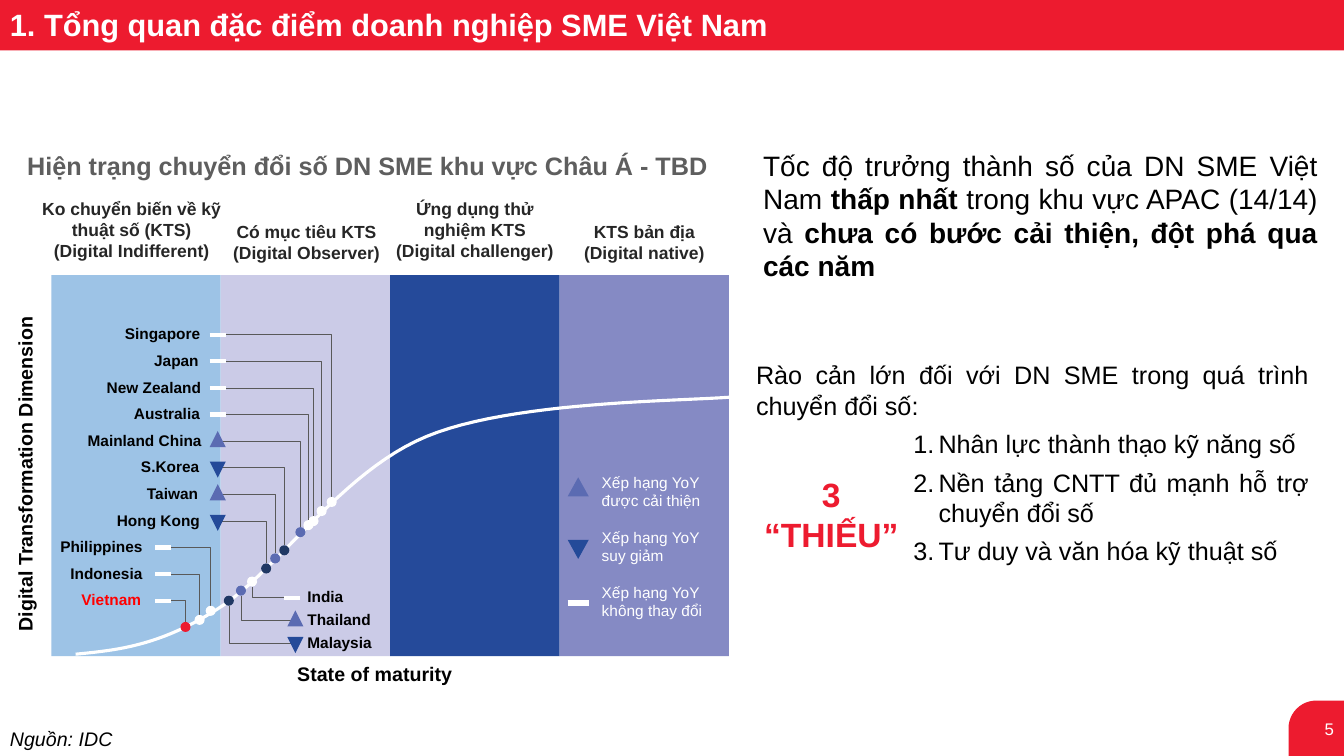
from dataclasses import dataclass
from typing import Any, Sequence

from lxml import etree
from pptx import Presentation
from pptx.dml.color import RGBColor
from pptx.enum.shapes import MSO_CONNECTOR, MSO_SHAPE
from pptx.enum.text import MSO_ANCHOR, MSO_AUTO_SIZE, PP_ALIGN
from pptx.oxml.ns import qn
from pptx.util import Cm, Length, Pt

RECT, OVAL = MSO_SHAPE.RECTANGLE, MSO_SHAPE.OVAL
TRIANGLE, CORNER = MSO_SHAPE.ISOSCELES_TRIANGLE, MSO_SHAPE.ROUND_1_RECTANGLE
STRAIGHT, ELBOW = MSO_CONNECTOR.STRAIGHT, MSO_CONNECTOR.ELBOW
LEFT, CENTER, RIGHT, JUSTIFY = PP_ALIGN.LEFT, PP_ALIGN.CENTER, PP_ALIGN.RIGHT, PP_ALIGN.JUSTIFY
MIDDLE = MSO_ANCHOR.MIDDLE
FIT = MSO_AUTO_SIZE.SHAPE_TO_FIT_TEXT

FONT = "Arial"
RED, WHITE, BLACK, GREY = "ED1B2F", "FFFFFF", "000000", "595959"
UP, DOWN, SAME = "up", "down", "same"
TRIANGLE_COLORS = {UP: "5B6BB2", DOWN: "244A99"}
DOT_COLORS = {UP: "5B6BB2", DOWN: "203864", SAME: WHITE}
DOT = 0.1
ROW_TOP, ROW_STEP = 3.17, 0.264
LOWER_TOP, LOWER_STEP = 5.78, 0.225
BAND_LEFT, BAND_TOP, BAND_WIDTH, BAND_HEIGHT = 0.51, 2.73, 1.68, 3.78


@dataclass
class Country:
    name: str
    label_left: float
    label_width: float
    marker_left: float
    dot_x: float
    dot_y: float
    trend: str


@dataclass
class Stage:
    color: str
    left: float
    top: float
    width: float
    wrap: bool
    lines: list[str]


UPPER_COUNTRIES = [
    Country("Singapore", 1.14, 1.0, 2.08, 3.29, 4.98, SAME),
    Country("Japan", 1.43, 0.68, 2.08, 3.19, 5.07, SAME),
    Country("New Zealand", 0.96, 1.2, 2.08, 3.11, 5.17, SAME),
    Country("Australia", 1.23, 0.9, 2.08, 3.06, 5.21, SAME),
    Country("Mainland China", 0.77, 1.41, 2.08, 2.98, 5.28, UP),
    Country("S.Korea", 1.3, 0.82, 2.08, 2.82, 5.46, DOWN),
    Country("Taiwan", 1.36, 0.76, 2.08, 2.73, 5.54, UP),
    Country("Hong Kong", 1.06, 1.09, 2.08, 2.64, 5.64, DOWN),
    Country("Philippines", 0.5, 1.07, 1.54, 2.09, 6.06, SAME),
    Country("Indonesia", 0.6, 0.97, 1.54, 1.98, 6.15, SAME),
    Country("Vietnam", 0.71, 0.84, 1.54, 1.84, 6.22, SAME),
]
LOWER_COUNTRIES = [
    Country("India", 2.95, 0.59, 2.82, 2.5, 5.77, SAME),
    Country("Thailand", 2.95, 0.88, 2.85, 2.39, 5.86, UP),
    Country("Malaysia", 2.95, 0.89, 2.85, 2.27, 5.96, DOWN),
]
STAGES = [
    Stage("9DC3E6", 0.31, 1.92, 1.99, True,
          ["Ko chuyển biến về kỹ thuật số (KTS)", "(Digital Indifferent)"]),
    Stage("CBCBE7", 2.16, 2.14, 1.76, False, ["Có mục tiêu KTS", "(Digital Observer)"]),
    Stage("254A9A", 3.71, 1.92, 2.0, True, ["Ứng dụng thử nghiệm KTS", "(Digital challenger)"]),
    Stage("858AC4", 5.65, 2.14, 1.48, False, ["KTS bản địa", "(Digital native)"]),
]
CURVE_START = (0.75, 6.49)
CURVE_SEGMENTS = [
    ((1.16, 6.45), (1.58, 6.41), (2.16, 6.04)),
    ((2.74, 5.68), (3.38, 4.68), (4.23, 4.33)),
    ((5.07, 3.98), (6.74, 3.98), (7.24, 3.94)),
]


def inch(value: float) -> Length:
    """Turn inches on the slide grid into a length."""
    return Cm(value * 2.54)


def rgb(color: str) -> RGBColor:
    return RGBColor.from_string(color)


def add_filled(slide: Any, kind: Any, left: float, top: float, width: float, height: float,
               color: str, flip: str = "") -> Any:
    shape = slide.shapes.add_shape(kind, inch(left), inch(top), inch(width), inch(height))
    shape.shadow.inherit = False
    shape.fill.solid()
    shape.fill.fore_color.rgb = rgb(color)
    shape.line.fill.background()
    if flip:
        shape._element.spPr.find(qn("a:xfrm")).set(flip, "1")
    return shape


def add_line(slide: Any, kind: Any, x1: float, y1: float, x2: float, y2: float,
             color: str, weight: float) -> Any:
    line = slide.shapes.add_connector(kind, inch(x1), inch(y1), inch(x2), inch(y2))
    line.line.color.rgb = rgb(color)
    line.line.width = Pt(weight)
    etree.SubElement(line._element.spPr, qn("a:effectLst"))
    return line


def style(paragraph: Any, size: float, color: str, bold: bool | None = False,
          align: Any = LEFT, italic: bool = False) -> None:
    paragraph.alignment = align
    font = paragraph.font
    font.name, font.size, font.bold, font.italic = FONT, Pt(size), bold, italic
    font.color.rgb = rgb(color)


def add_text(slide: Any, left: float, top: float, width: float, height: float,
             lines: Sequence[str], size: float, color: str = BLACK, bold: bool = False,
             align: Any = LEFT, wrap: bool = True, italic: bool = False) -> Any:
    box = slide.shapes.add_textbox(inch(left), inch(top), inch(width), inch(height))
    frame = box.text_frame
    frame.word_wrap = wrap
    frame.auto_size = FIT
    frame.text = "\n".join(lines)
    for paragraph in frame.paragraphs:
        style(paragraph, size, color, bold, align, italic)
    return frame


def add_marker(slide: Any, trend: str, left: float, middle: float, width: float,
               height: float, weight: float) -> None:
    """Show a ranking change: triangle up, triangle down or a flat dash."""
    if trend == SAME:
        add_line(slide, STRAIGHT, left, middle, left + width, middle, WHITE, weight)
        return
    top = middle - height / 2 + (-0.02 if trend == UP else 0.02)
    add_filled(slide, TRIANGLE, left, top, width, height, TRIANGLE_COLORS[trend],
               "flipV" if trend == DOWN else "")


def add_country(slide: Any, country: Country, top: float, lower: bool) -> None:
    middle = top + 0.15
    is_vietnam = country.name == "Vietnam"
    start = country.label_left + (0 if lower else country.label_width)
    end = country.dot_y + (DOT / 2 if lower else -DOT / 2)
    elbow = add_line(slide, ELBOW, start, middle, country.dot_x, end, GREY, 0.5)
    elbow._element.spPr.find(qn("a:prstGeom")).set("prst", "bentConnector2")
    add_filled(slide, OVAL, country.dot_x - DOT / 2, country.dot_y - DOT / 2, DOT, DOT,
               RED if is_vietnam else DOT_COLORS[country.trend])
    add_text(slide, country.label_left, top, country.label_width, 0.3, [country.name], 11,
             "FF0000" if is_vietnam else BLACK, bold=True, wrap=False)
    add_marker(slide, country.trend, country.marker_left, middle, 0.16, 0.16, 3)


def add_maturity_curve(slide: Any, steps: int = 24) -> None:
    points, start = [], CURVE_START
    for c1, c2, end in CURVE_SEGMENTS:
        for t in (step / steps for step in range(1, steps + 1)):
            u = 1 - t
            points.append(tuple(
                inch(u**3 * a + 3 * u * u * t * b + 3 * u * t * t * c + t**3 * d)
                for a, b, c, d in zip(start, c1, c2, end)))
        start = end
    builder = slide.shapes.build_freeform(*(inch(v) for v in CURVE_START))
    builder.add_line_segments(points, close=False)
    curve = builder.convert_to_shape()
    curve.shadow.inherit = False
    curve.fill.background()
    curve.line.color.rgb = rgb(WHITE)
    curve.line.width = Pt(2.25)


def add_chart_area(slide: Any) -> None:
    for i, stage in enumerate(STAGES):
        add_filled(slide, RECT, BAND_LEFT + i * BAND_WIDTH, BAND_TOP, BAND_WIDTH, BAND_HEIGHT,
                   stage.color)
        add_text(slide, stage.left, stage.top, stage.width, 2.69 - stage.top, stage.lines,
                 12.5, "262626", bold=True, align=CENTER, wrap=stage.wrap)
    add_maturity_curve(slide)
    for i, country in enumerate(UPPER_COUNTRIES):
        add_country(slide, country, ROW_TOP + i * ROW_STEP, lower=False)
    for i, country in enumerate(LOWER_COUNTRIES):
        add_country(slide, country, LOWER_TOP + i * LOWER_STEP, lower=True)
    dimension = add_text(slide, 0.08, 2.97, 0.46, 3.39, ["Digital Transformation Dimension"],
                         14, bold=True, wrap=False)
    dimension._txBody.bodyPr.set("vert", "vert270")
    add_text(slide, 2.85, 6.52, 1.83, 0.35, ["State of maturity"], 14, bold=True, wrap=False)
    legend = add_text(slide, 5.87, 4.64, 1.5, 1.66, [
        "Xếp hạng YoY", "được cải thiện", "Xếp hạng YoY", "suy giảm",
        "Xếp hạng YoY không thay đổi"], 11, WHITE)
    for paragraph in legend.paragraphs[2::2]:
        paragraph.space_before = Pt(13)
    for trend, middle in ((UP, 4.85), (DOWN, 5.43), (SAME, 5.98)):
        add_marker(slide, trend, 5.63, middle, 0.21, 0.19, 4.5)


def add_findings(slide: Any) -> None:
    speed = add_text(slide, 7.47, 1.42, 5.7, 1.45, [""], 20).paragraphs[0]
    for text, bold in (("Tốc độ trưởng thành số của DN SME Việt Nam ", False),
                       ("thấp nhất ", True), ("trong khu vực APAC (14/14) và ", False),
                       ("chưa có bước cải thiện, đột phá qua các năm", True)):
        run = speed.add_run()
        run.text, run.font.bold = text, bold
    style(speed, 20, BLACK, None, JUSTIFY)

    barriers = add_text(slide, 7.4, 3.52, 5.68, 2.17, [
        "Rào cản lớn đối với DN SME trong quá trình chuyển đổi số:",
        "Nhân lực thành thạo kỹ năng số",
        "Nền tảng CNTT đủ mạnh hỗ trợ chuyển đổi số",
        "Tư duy và văn hóa kỹ thuật số"], 18, align=JUSTIFY)
    for paragraph in barriers.paragraphs[1:]:
        paragraph.space_before = Pt(5.9)
        properties = paragraph._p.get_or_add_pPr()
        properties.set("marL", str(inch(1.81)))
        properties.set("indent", str(-inch(0.25)))
        number = etree.Element(qn("a:buAutoNum"), type="arabicPeriod")
        properties.find(qn("a:defRPr")).addprevious(number)
    add_text(slide, 7.47, 4.65, 1.55, 0.91, ["3", "“THIẾU”"], 24, RED, bold=True, align=CENTER)


def main() -> None:
    deck = Presentation()
    deck.slide_width, deck.slide_height = inch(13.33), inch(7.5)
    slide = deck.slides.add_slide(deck.slide_layouts[6])

    corner = add_filled(slide, CORNER, 12.78, 6.95, 0.55, 0.55, RED, "flipH")
    corner.adjustments[0] = 0.5
    corner.text_frame.text = "5"
    corner.text_frame.vertical_anchor = MIDDLE
    style(corner.text_frame.paragraphs[0], 12, WHITE, align=RIGHT)
    add_filled(slide, RECT, 0, 0, 13.33, 0.5, RED)
    title = add_text(slide, 0, 0.01, 7.82, 0.47,
                     ["1. Tổng quan đặc điểm doanh nghiệp SME Việt Nam"], 22, WHITE,
                     bold=True, wrap=False)
    title.vertical_anchor = MIDDLE
    add_text(slide, 0.05, 1.44, 7.19, 0.4,
             ["Hiện trạng chuyển đổi số DN SME khu vực Châu Á - TBD"], 18, "5E5E5E",
             bold=True, align=CENTER)
    add_chart_area(slide)
    add_findings(slide)
    add_text(slide, 0, 7.16, 1.47, 0.34, ["Nguồn: IDC"], 14, italic=True)
    deck.save("out.pptx")


if __name__ == "__main__":
    main()
